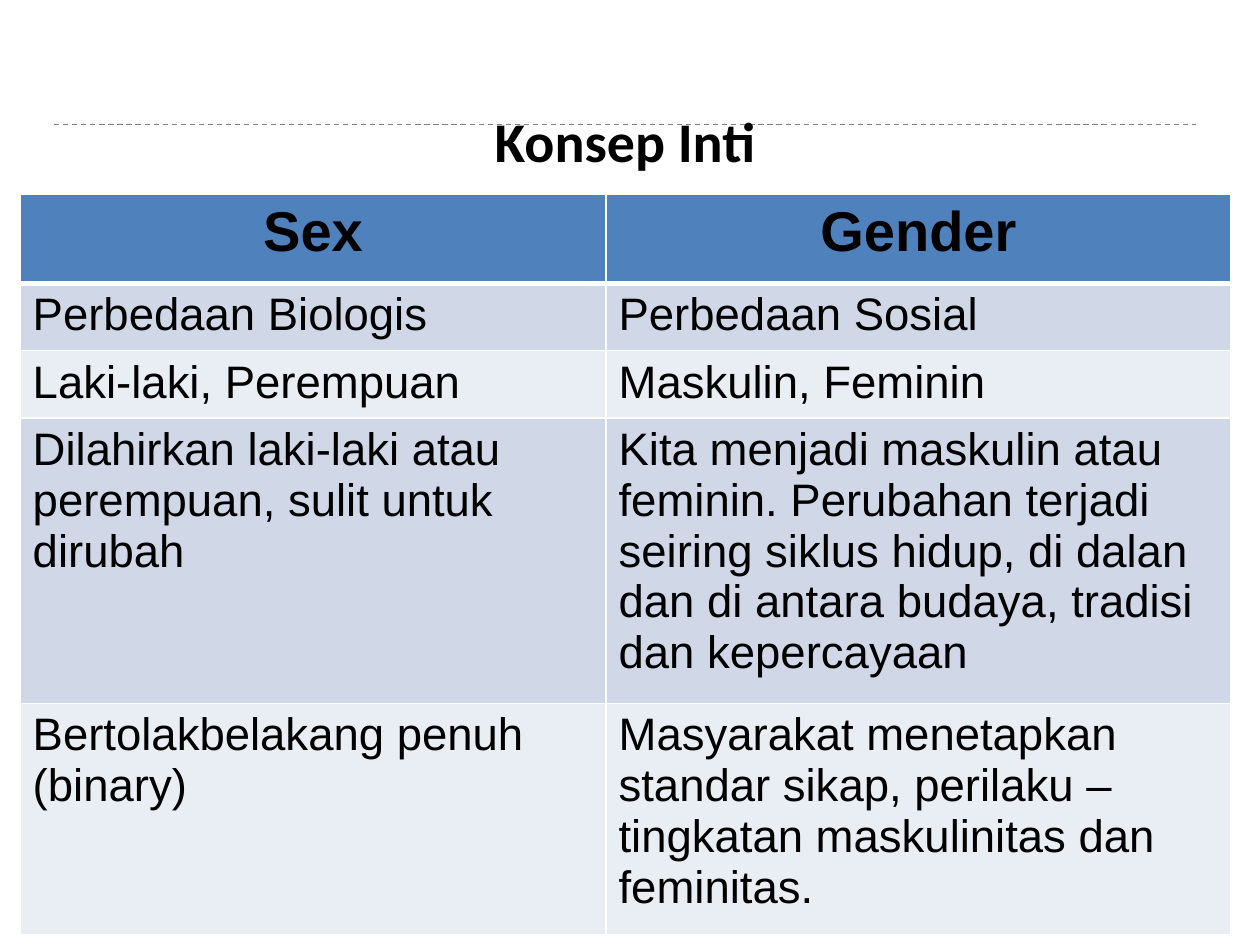
"""Build the slide that contrasts sex and gender."""
from dataclasses import dataclass

from lxml.etree import SubElement
from pptx import Presentation
from pptx.dml.color import RGBColor
from pptx.enum.dml import MSO_LINE
from pptx.enum.shapes import MSO_CONNECTOR
from pptx.enum.text import MSO_ANCHOR, PP_ALIGN
from pptx.oxml.ns import qn
from pptx.util import Pt


@dataclass(frozen=True)
class Style:
    """Look of a piece of text."""
    font: str
    size: float
    bold: bool
    align: PP_ALIGN


@dataclass(frozen=True)
class Row:
    """One table row with its height in points."""
    height: float
    sex: str
    gender: str


TITLE = Style("Calibri", 32, True, PP_ALIGN.CENTER)
HEAD = Style("Arial", 32, True, PP_ALIGN.CENTER)
BODY = Style("Arial", 26, False, PP_ALIGN.LEFT)
LEFT, WIDTH = 31, 652.3
COLS = (334.8, 357.1)
BANDS = ("E9EDF4", "D0D8E8")
ROWS = (
    Row(51.1, "Sex", "Gender"),
    Row(34.6, "Perbedaan Biologis", "Perbedaan Sosial"),
    Row(34.6, "Laki-laki, Perempuan", "Maskulin, Feminin"),
    Row(118.1, "Dilahirkan laki-laki atau perempuan, sulit untuk dirubah",
        "Kita menjadi maskulin atau feminin. Perubahan terjadi seiring siklus "
        "hidup, di dalan dan di antara budaya, tradisi dan kepercayaan"),
    Row(88.6, "Bertolakbelakang penuh (binary)",
        "Masyarakat menetapkan standar sikap, perilaku –tingkatan "
        "maskulinitas dan feminitas."),
)


def paint(target, color: str) -> None:
    """Give a fill a solid hex colour."""
    target.solid()
    target.fore_color.rgb = RGBColor.from_string(color)


def write(frame, text: str, style: Style) -> None:
    """Put styled black text into a frame."""
    frame.text = text
    para = frame.paragraphs[0]
    para.alignment = style.align
    font = para.runs[0].font
    font.name, font.size, font.bold = style.font, Pt(style.size), style.bold
    paint(font.fill, "000000")


def edge(cell, side: str, width: float) -> None:
    """Draw one white cell border."""
    line = SubElement(cell._tc.get_or_add_tcPr(), qn(f"a:ln{side}"), w=str(Pt(width)))
    fill = SubElement(line, qn("a:solidFill"))
    SubElement(fill, qn("a:srgbClr"), val="FFFFFF")


def add_rule(slide, top: float) -> None:
    """Draw the dashed rule across the slide."""
    rule = slide.shapes.add_connector(
        MSO_CONNECTOR.STRAIGHT, Pt(LEFT), Pt(top), Pt(LEFT + WIDTH), Pt(top))
    paint(rule.line.fill, "808080")
    rule.line.width = Pt(0.75)
    rule.line.dash_style = MSO_LINE.DASH
    SubElement(rule._element.spPr, qn("a:effectLst"))


def add_title(slide, text: str) -> None:
    """Add the centred title."""
    box = slide.shapes.add_textbox(Pt(LEFT), Pt(35.3), Pt(WIDTH), Pt(90))
    frame = box.text_frame
    frame.word_wrap = True
    frame.vertical_anchor = MSO_ANCHOR.MIDDLE
    write(frame, text, TITLE)


def add_grid(slide, rows: tuple[Row, ...]) -> None:
    """Add the banded table."""
    high = sum(row.height for row in rows)
    table = slide.shapes.add_table(
        len(rows), len(COLS), Pt(11.5), Pt(110.9), Pt(sum(COLS)), Pt(high)).table
    for col, width in zip(table.columns, COLS):
        col.width = Pt(width)
    for i, row in enumerate(rows):
        table.rows[i].height = Pt(row.height)
        for j, text in enumerate((row.sex, row.gender)):
            cell = table.cell(i, j)
            write(cell.text_frame, text, BODY if i else HEAD)
            for side in "LRTB":
                edge(cell, side, 3 if (i, side) in ((0, "B"), (1, "T")) else 1)
            paint(cell.fill, BANDS[i % 2] if i else "4F81BD")


def main() -> None:
    """Build and save the deck."""
    deck = Presentation()
    deck.slide_width, deck.slide_height = Pt(720), Pt(540)
    slide = deck.slides.add_slide(deck.slide_layouts[6])
    add_rule(slide, 71.3)
    add_title(slide, "Konsep Inti")
    add_grid(slide, ROWS)
    deck.save("out.pptx")


if __name__ == "__main__":
    main()
